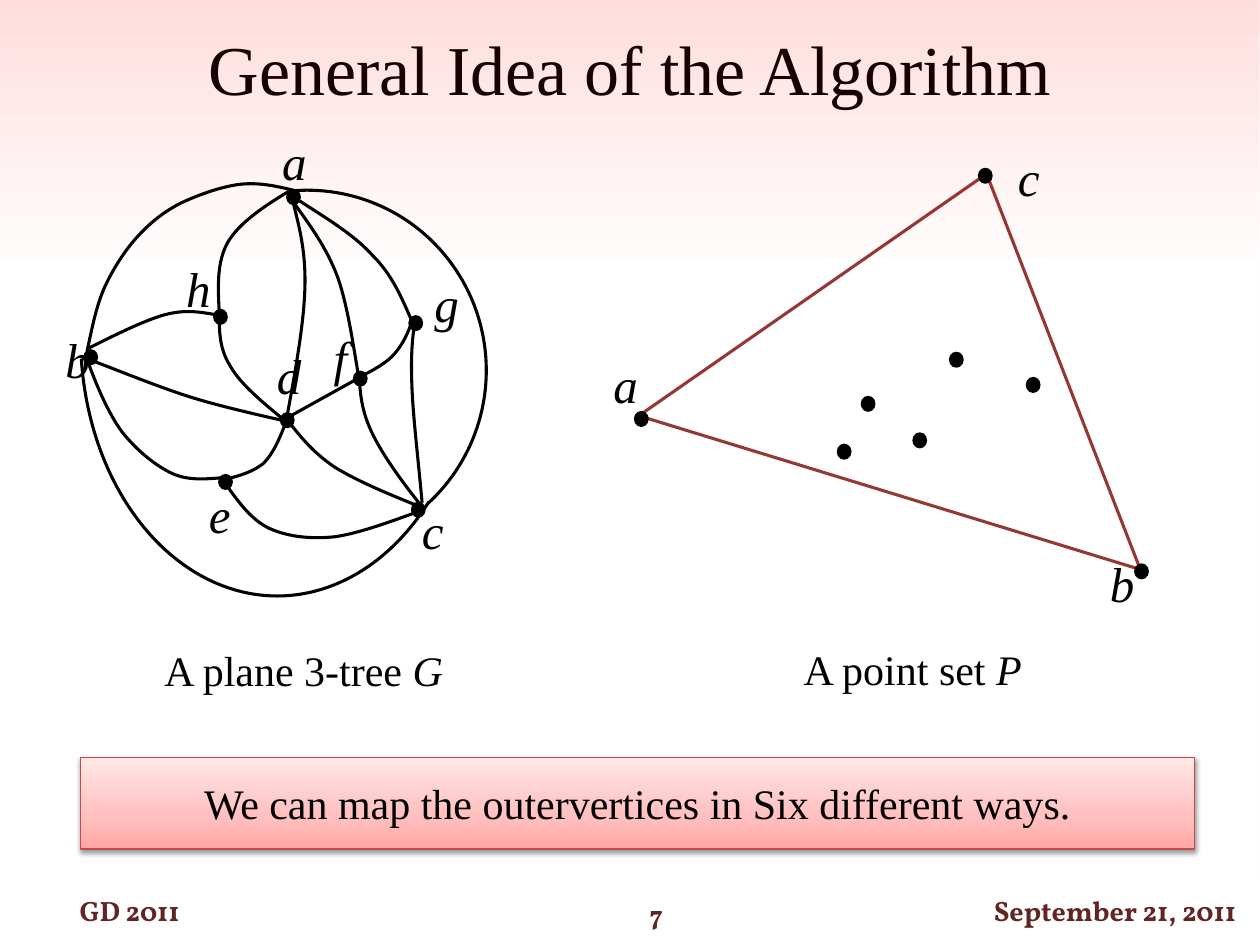
"""Build the slide that introduces the general idea of the algorithm."""
import dataclasses

import lxml.etree
import pptx
import pptx.dml.color
import pptx.enum.shapes
import pptx.enum.text
import pptx.oxml
import pptx.oxml.ns
import pptx.util

SHAPE = pptx.enum.shapes.MSO_SHAPE
ALIGN = pptx.enum.text.PP_ALIGN
ANCHOR = pptx.enum.text.MSO_ANCHOR
qn = pptx.oxml.ns.qn


@dataclasses.dataclass(frozen=True)
class Theme:
    """Colours, type sizes and line widths of the deck."""
    ink: str = "000000"
    polygon: str = "953735"
    footer: str = "632523"
    banner_line: str = "BF4C48"
    banner_fill: tuple = ((0, "FFA6A5", 100), (35, "FFC0BF", 100), (100, "FFE7E7", 100))
    wash: tuple = ((0, "FF0000", 0), (45, "FF0000", 0), (70, "FF0300", 0), (100, "FF0000", 13))
    serif: str = "Times New Roman"
    footer_font: str = "Vollkorn"
    title_size: int = 40
    label_size: int = 28
    body_size: int = 24
    footer_size: int = 16
    edge_width: float = 1.75
    dot_width: float = 1.25
    banner_width: float = 0.75


class SlideBuilder:
    """Place elements on a slide by the columns and rows of a 100 by 75 grid."""

    def __init__(self, presentation, slide, theme):
        """Keep the slide, the theme and the size of a grid cell."""
        self.slide, self.shapes, self.theme = slide, slide.shapes, theme
        self.column = presentation.slide_width / 100
        self.row = presentation.slide_height / 75

    def place(self, column, row):
        """Turn a grid position into a pair of lengths."""
        return round(column * self.column), round(row * self.row)

    def box(self, left, top, width, height):
        """Turn a grid box into four lengths."""
        return *self.place(left, top), *self.place(width, height)

    def set_text(self, shape, runs, size, wrap=True, anchor=ANCHOR.MIDDLE, **font_format):
        """Set centred runs, given as pairs of text and italic."""
        frame = shape.text_frame
        for name, value in {"word_wrap": wrap, "vertical_anchor": anchor}.items():
            setattr(frame, name, value)
        paragraph = frame.paragraphs[0]
        paragraph.alignment = ALIGN.CENTER
        color = font_format.pop("color", self.theme.ink)
        values = {"name": self.theme.serif, "size": pptx.util.Pt(size), **font_format}
        for text, italic in runs:
            run = paragraph.add_run()
            run.text = text
            for name, value in {**values, "italic": italic}.items():
                setattr(run.font, name, value)
            run.font.color.rgb = pptx.dml.color.RGBColor.from_string(color)

    def outline(self, shape, color, width):
        """Set the line of a shape."""
        shape.line.color.rgb = pptx.dml.color.RGBColor.from_string(color)
        shape.line.width = pptx.util.Pt(width)

    def preset(self, kind, *box):
        """Add a preset shape without fill, line or shadow."""
        shape = self.shapes.add_shape(kind, *self.box(*box))
        shape.shadow.inherit = False
        shape.fill.background()
        shape.line.fill.background()
        return shape

    def gradient(self, shape, stops):
        """Fill a shape upwards with stops of position, colour and opacity."""
        entries = "".join(
            f'<a:gs pos="{position * 1000}"><a:srgbClr val="{color}">'
            f'<a:alpha val="{opacity * 1000}"/></a:srgbClr></a:gs>'
            for position, color, opacity in stops)
        fill = pptx.oxml.parse_xml(
            f'<a:gradFill {pptx.oxml.ns.nsdecls("a")} rotWithShape="1"><a:gsLst>{entries}'
            '</a:gsLst><a:lin ang="16200000" scaled="0"/></a:gradFill>')
        properties = shape._element.spPr
        properties.replace(properties.find(qn("a:noFill")), fill)

    def wash(self, *box):
        """Add the tinted backdrop."""
        self.gradient(self.preset(SHAPE.RECTANGLE, *box), self.theme.wash)

    def title(self, text, *box):
        """Move and format the title placeholder."""
        title = self.shapes.title
        for name, value in zip(("left", "top", "width", "height"), self.box(*box)):
            setattr(title, name, value)
        self.set_text(title, [(text, False)], self.theme.title_size, anchor=ANCHOR.TOP)

    def footer(self, text, *box):
        """Add a footer entry."""
        self.set_text(self.preset(SHAPE.ROUNDED_RECTANGLE, *box), [(text, False)],
                      self.theme.footer_size, name=self.theme.footer_font,
                      color=self.theme.footer, bold=True)

    def label(self, text, left, top):
        """Add the name of a vertex."""
        shape = self.shapes.add_textbox(*self.box(left, top, 2, 1.9))
        self.set_text(shape, [(text, True)], self.theme.label_size)

    def caption(self, text, symbol, *box):
        """Add a caption that ends with an italic symbol."""
        shape = self.shapes.add_textbox(*self.box(*box))
        self.set_text(shape, [(text, False), (symbol, True)], self.theme.body_size,
                      wrap=False, anchor=ANCHOR.TOP)

    def dot(self, left, top):
        """Add a vertex."""
        shape = self.preset(SHAPE.OVAL, left, top, 1, 1.1)
        shape.fill.solid()
        shape.fill.fore_color.rgb = pptx.dml.color.RGBColor.from_string(self.theme.ink)
        self.outline(shape, self.theme.ink, self.theme.dot_width)

    def arc(self, start, end, *box):
        """Add an arc between two angles in degrees."""
        shape = self.preset(SHAPE.ARC, *box)
        for index, angle in enumerate((start, end)):
            shape.adjustments[index] = angle * 0.6
        self.outline(shape, self.theme.ink, self.theme.edge_width)

    def freeform(self, points, color, close=False):
        """Add an unfilled outline through the points."""
        start, *others = [self.place(*point) for point in points]
        builder = self.shapes.build_freeform(*start)
        builder.add_line_segments(others, close=close)
        shape = builder.convert_to_shape()
        shape.shadow.inherit = False
        shape.fill.background()
        self.outline(shape, color, self.theme.edge_width)
        return shape

    def curve(self, *points):
        """Add a Bézier edge: a start, then two handles and an end per piece."""
        shape = self.freeform(points, self.theme.ink)
        lines = list(shape._element.iter(qn("a:lnTo")))
        for first in range(0, len(lines), 3):
            piece = lxml.etree.Element(qn("a:cubicBezTo"))
            lines[first].addprevious(piece)
            for line in lines[first:first + 3]:
                piece.append(line[0])
                line.getparent().remove(line)

    def straight(self, start, end):
        """Add a straight edge."""
        connector = self.shapes.add_connector(
            pptx.enum.shapes.MSO_CONNECTOR.STRAIGHT, *self.place(*start), *self.place(*end))
        self.outline(connector, self.theme.ink, self.theme.edge_width)
        lxml.etree.SubElement(connector._element.spPr, qn("a:effectLst"))

    def banner(self, text, *box):
        """Add the shaded statement."""
        shape = self.preset(SHAPE.RECTANGLE, *box)
        self.gradient(shape, self.theme.banner_fill)
        self.outline(shape, self.theme.banner_line, self.theme.banner_width)
        shape._element.spPr.find(qn("a:effectLst")).append(pptx.oxml.parse_xml(
            f'<a:outerShdw {pptx.oxml.ns.nsdecls("a")} blurRad="39400" dist="20300" '
            f'dir="5400000" rotWithShape="0"><a:srgbClr val="{self.theme.ink}">'
            '<a:alpha val="38000"/></a:srgbClr></a:outerShdw>'))
        self.set_text(shape, [(text, False)], self.theme.body_size, wrap=False)


CURVES = [
    [(7, 28.5), (9.9, 29.6), (12.8, 30.8), (15.4, 31.6), (18, 32.4), (22.6, 33.4), (22.6, 33.4)],
    [(23.3, 16.2), (23.8, 18.2), (24.3, 20.1), (24.2, 23), (24.1, 25.9), (23.4, 29.7), (22.7, 33.5)],
    [(22.7, 33.2), (23.8, 34.6), (24.8, 35.9), (26.6, 37.1), (28.4, 38.2), (30.8, 39.2), (33.3, 40.2)],
    [(6.9, 27.9), (7.3, 26.1), (7.6, 24.4), (8.3, 22.8), (9, 21.3), (9.9, 19.9), (10.9, 18.8),
     (11.9, 17.7), (13, 16.8), (14.4, 16.1), (15.9, 15.4), (17.9, 14.7), (19.4, 14.6),
     (21, 14.5), (22.4, 14.9), (23.7, 15.2)],
    [(17.7, 38.1), (18.9, 37.8), (20, 37.5), (20.9, 36.8), (21.7, 36), (22.2, 34.8), (22.7, 33.5)],
    [(6.9, 28.5), (7.7, 30.7), (8.6, 32.8), (9.7, 34.3), (10.9, 35.8), (12.4, 37), (13.7, 37.6),
     (15.1, 38.2), (16.5, 38), (17.9, 37.9)],
    [(17.9, 38.4), (18.9, 39.8), (19.9, 41.2), (21.3, 41.9), (22.8, 42.6), (24.6, 42.8), (26.6, 42.6),
     (28.6, 42.3), (31, 41.4), (33.5, 40.5)],
    [(17.4, 25), (17.4, 26.3), (17.4, 27.7), (18.3, 29.1), (19.1, 30.5), (20.8, 31.9), (22.5, 33.3)],
    [(17.4, 24.7), (17.3, 22.7), (17.2, 20.8), (18.1, 19.2), (19, 17.7), (20.9, 16.4), (22.9, 15.2)],
    [(17.3, 25), (16, 24.8), (14.8, 24.5), (13, 25), (11.3, 25.5), (9.1, 26.6), (6.9, 27.7)],
    [(23.4, 16.2), (24.6, 17.9), (25.9, 19.6), (26.8, 22), (27.6, 24.3), (28, 27.2), (28.5, 30.1)],
    [(28.5, 29.9), (28.6, 31.3), (28.7, 32.6), (29.5, 34.3), (30.3, 36), (31.8, 38.1), (33.4, 40.1)],
    [(32.7, 25.5), (31.9, 23.7), (31.2, 21.9), (29.6, 20.3), (28.1, 18.6), (25.7, 17.2), (23.4, 15.7)],
    [(28.6, 29.9), (29.6, 29.4), (30.7, 28.8), (31.3, 28.1), (32, 27.3), (32.4, 26.4), (32.7, 25.5)],
    [(32.9, 25.7), (32.7, 27.1), (32.6, 28.4), (32.7, 30.8), (32.8, 33.2), (33.2, 36.5), (33.5, 39.9)],
]
TREE_VERTICES = [(32.7, 39.9), (17.4, 37.7), (22.3, 32.8), (22.8, 15.1), (6.7, 27.8),
                 (28.1, 29.5), (32.5, 25.1), (17, 24.6)]
SET_POINTS = [(50.4, 32.7), (77.7, 13.4), (90.1, 44.8), (68.4, 31.5), (81.5, 30),
              (66.5, 35.3), (75.4, 28), (72.5, 34.4)]
LABELS = [("a", 21.4, 11.8), ("b", 4.2, 27.5), ("c", 32.5, 41.1), ("d", 21, 28.8),
          ("e", 15.6, 39.8), ("f", 25.5, 27.4), ("g", 33.5, 23.1), ("h", 13.8, 21.9),
          ("a", 47.7, 29.5), ("b", 87.1, 45.3), ("c", 79.8, 13.1)]


def main():
    """Build and save the presentation."""
    presentation = pptx.Presentation()
    presentation.slide_width = pptx.util.Inches(10)
    presentation.slide_height = pptx.util.Inches(7.5)
    slide = presentation.slides.add_slide(presentation.slide_layouts[5])
    builder = SlideBuilder(presentation, slide, Theme())
    builder.freeform([(50.7, 33), (78.3, 13.8), (90.5, 45.2)], builder.theme.polygon, close=True)
    builder.wash(0, 0, 100, 70.1)
    builder.title("General Idea of the Algorithm", 0, 1.5, 100, 7.7)
    builder.arc(263.99, 47.76, 10.2, 15.1, 28.4, 28.6)
    builder.arc(47.37, 173.69, 6.4, 6.2, 31.2, 41.1)
    for points in CURVES:
        builder.curve(*points)
    builder.straight((22.9, 33.1), (28.3, 30.1))
    for vertex in TREE_VERTICES + SET_POINTS:
        builder.dot(*vertex)
    for label in LABELS:
        builder.label(*label)
    builder.caption("A plane 3-tree ", "G", 12, 50.7, 24.2, 5)
    builder.caption("A point set ", "P", 62.8, 50.6, 19.3, 5)
    builder.banner("We can map the outervertices in Six different ways.", 6.4, 60.1, 88.4, 7.3)
    builder.footer("GD 2011", 0, 70.5, 20.6, 3.5)
    builder.footer("7", 41.8, 70.8, 20.6, 3.5)
    builder.footer("September 21, 2011", 77, 70.5, 23, 3.5)
    presentation.save("out.pptx")


if __name__ == "__main__":
    main()
